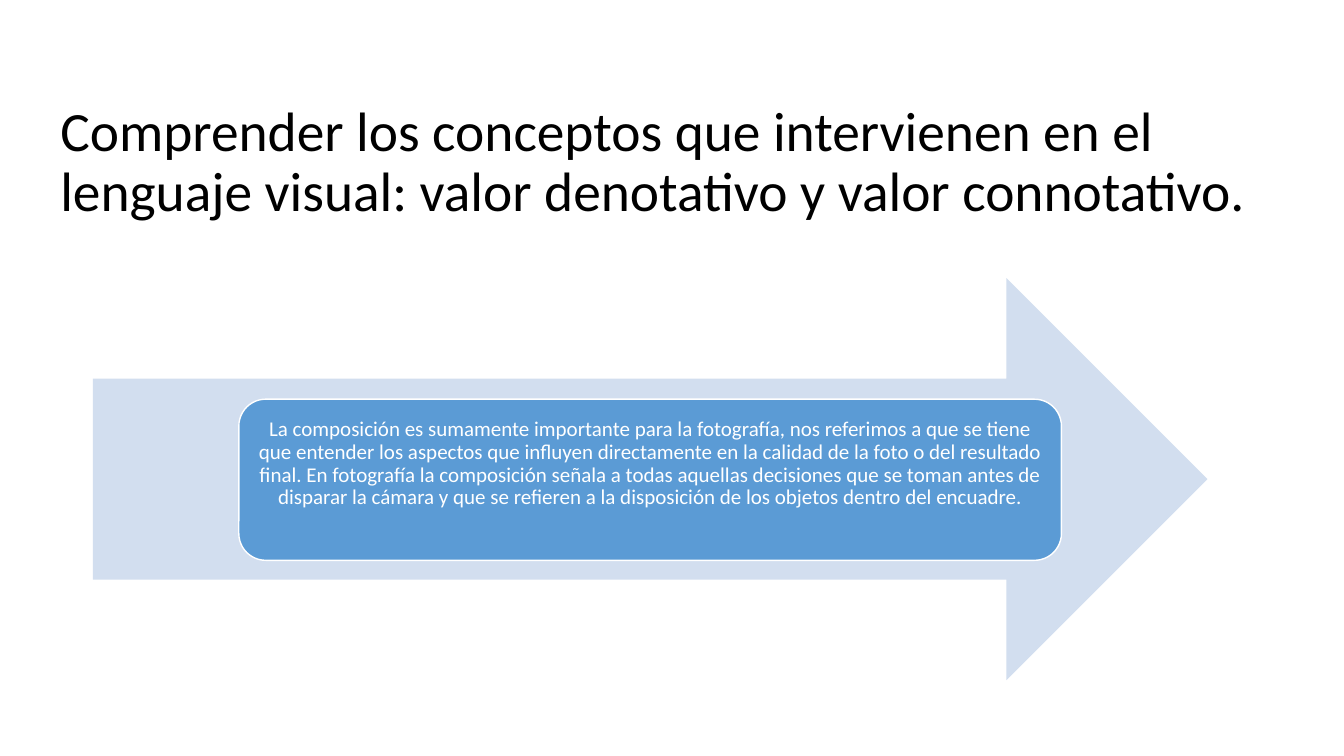
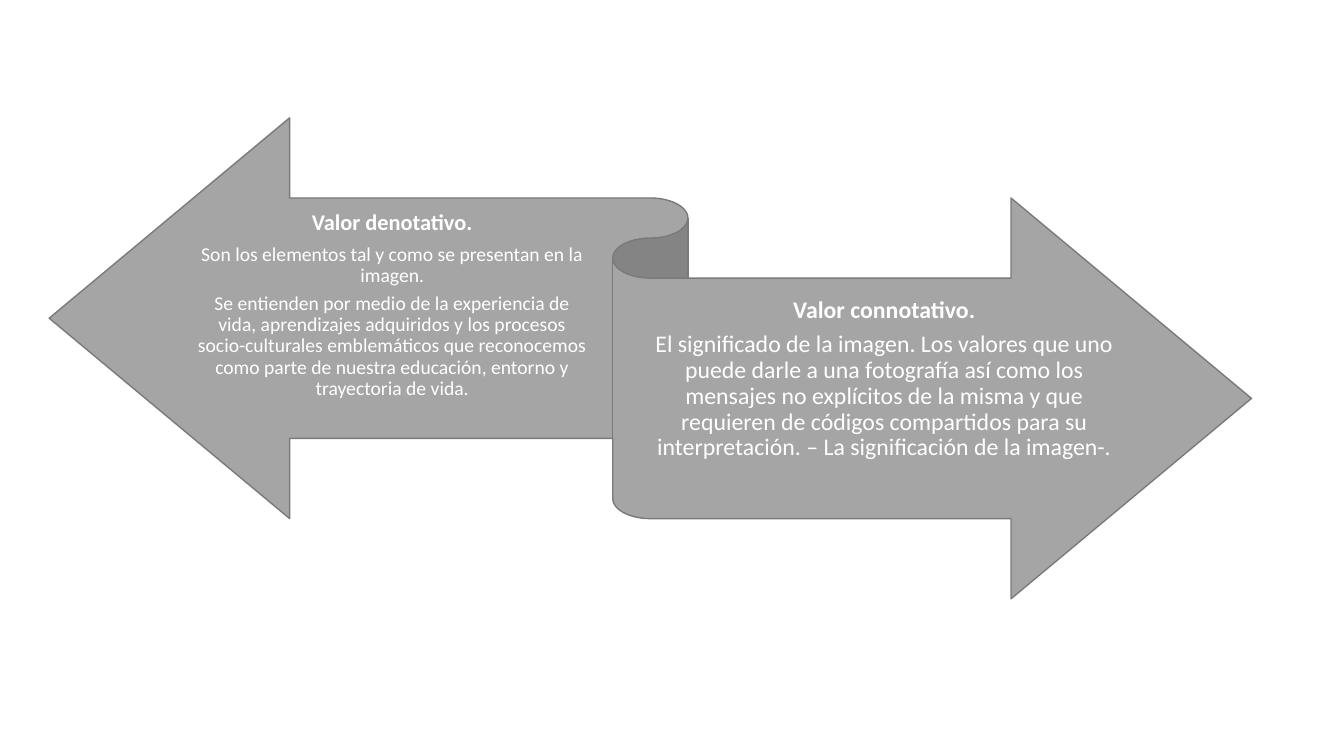
import pptx
import pptx.dml.color
import pptx.enum.shapes
import pptx.enum.text
import pptx.util

Cm = pptx.util.Cm
Shape = pptx.enum.shapes.MSO_SHAPE
Anchor = pptx.enum.text.MSO_ANCHOR
Align = pptx.enum.text.PP_ALIGN

COLOURS = {
    "black": "000000",
    "white": "FFFFFF",
    "pale_blue": "D2DEEF",
    "blue": "5B9BD5",
    "grey": "A5A5A5",
    "dark_grey": "7A7A7A",
}


class SlideBuilder:
    font = "Calibri"
    line_spacing = 0.9
    space_after = 0.35

    def __init__(self):
        self.deck = pptx.Presentation()
        self.deck.slide_width = Cm(33.87)
        self.deck.slide_height = Cm(19.05)
        self.page = None

    def colour(self, name):
        return pptx.dml.color.RGBColor.from_string(COLOURS[name])

    def new_page(self):
        self.page = self.deck.slides.add_slide(self.deck.slide_layouts[6])

    def shape(self, kind, place, fill, line=None):
        shape = self.page.shapes.add_shape(kind, *map(Cm, place))
        shape.shadow.inherit = False
        shape.fill.solid()
        shape.fill.fore_color.rgb = self.colour(fill)
        if line:
            shape.line.color.rgb = self.colour(line)
            shape.line.width = pptx.util.Pt(1)
        else:
            shape.line.fill.background()
        return shape

    def fill_text(self, box, paragraphs, insets, colour="white", align=Align.CENTER):
        frame = box.text_frame
        frame.word_wrap = True
        frame.vertical_anchor = Anchor.MIDDLE
        (frame.margin_left, frame.margin_top,
         frame.margin_right, frame.margin_bottom) = map(Cm, insets)
        frame.text = "\n".join(text for text, size, bold in paragraphs)
        for para, (text, size, bold) in zip(frame.paragraphs, paragraphs):
            para.alignment = align
            para.line_spacing = self.line_spacing
            para.space_after = pptx.util.Pt(round(size * self.space_after))
            for span in para.runs:
                span.font.name = self.font
                span.font.size = pptx.util.Pt(size)
                span.font.bold = bold
                span.font.color.rgb = self.colour(colour)

    def text(self, place, paragraphs, insets, **style):
        box = self.page.shapes.add_textbox(*map(Cm, place))
        self.fill_text(box, paragraphs, insets, **style)

    def title(self, text):
        self.text((1.27, 2.29, 31.27, 3.68), [(text, 39.6, False)],
                  (0.25, 0.13, 0.25, 0.13), colour="black", align=Align.LEFT)


def composition_page(builder):
    builder.new_page()
    builder.title("Comprender los conceptos que intervienen en el lenguaje visual: "
                  "valor denotativo y valor connotativo.")
    builder.shape(Shape.RIGHT_ARROW, (2.34, 7.01, 28.09, 10.13), "pale_blue")
    card = builder.shape(Shape.ROUNDED_RECTANGLE, (6.02, 10.06, 20.73, 4.06),
                         "blue", "white")
    definition = (
        "La composición es sumamente importante para la fotografía, nos referimos "
        "a que se tiene que entender los aspectos que influyen directamente en la "
        "calidad de la foto o del resultado final. En fotografía la composición "
        "señala a todas aquellas decisiones que se toman antes de disparar la "
        "cámara y que se refieren a la disposición de los objetos dentro del encuadre.")
    builder.fill_text(card, [(definition, 15, False)], (0.15, 0.15, 0.15, 0.95))


def values_page(builder):
    builder.new_page()
    builder.shape(Shape.LEFT_RIGHT_RIBBON, (1.24, 2.97, 30.3, 12.12),
                  "grey", "dark_grey")
    builder.text((4.88, 5.11, 10.01, 5.94), [
        ("Valor denotativo.", 16, True),
        ("Son los elementos tal y como se presentan en la imagen.", 14, False),
        ("Se entienden por medio de la experiencia de vida, aprendizajes "
         "adquiridos y los procesos socio-culturales emblemáticos que reconocemos "
         "como parte de nuestra educación, entorno y trayectoria de vida.", 14, False),
    ], (0, 0.15, 0, 0.91))
    builder.text((16.38, 7.04, 11.81, 5.94), [
        ("Valor connotativo.", 17, True),
        ("El significado de la imagen. Los valores que uno puede darle a una "
         "fotografía así como los mensajes no explícitos de la misma y que "
         "requieren de códigos compartidos para su interpretación. "
         "– La significación de la imagen-.", 17, False),
    ], (0, 0.18, 0, 1.07))


def main():
    builder = SlideBuilder()
    composition_page(builder)
    values_page(builder)
    builder.deck.save("out.pptx")


if __name__ == "__main__":
    main()
